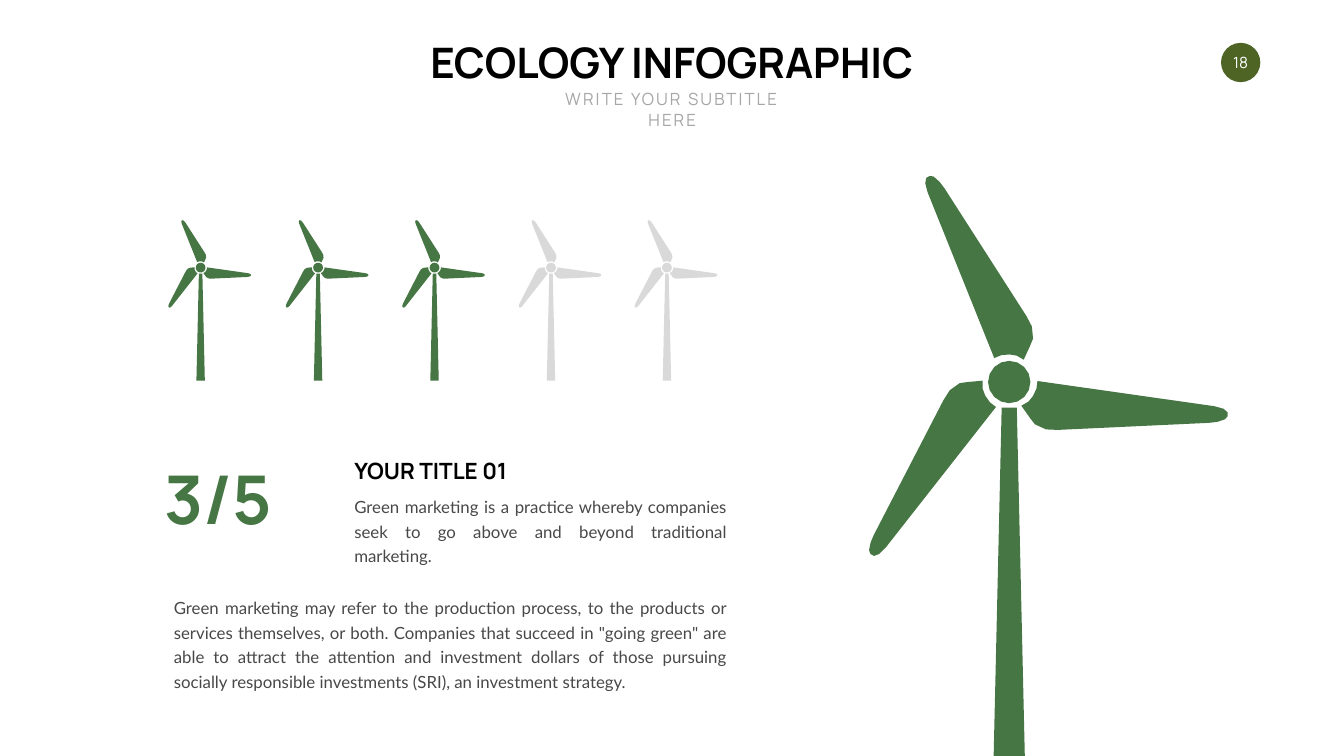
"""Ecology infographic slide: wind turbines showing three out of five."""
from math import cos, pi, radians, sin

from pptx import Presentation
from pptx.dml.color import RGBColor
from pptx.enum.shapes import MSO_SHAPE as Shape
from pptx.enum.text import MSO_ANCHOR as Anchor, MSO_AUTO_SIZE as AutoSize, PP_ALIGN as Align
from pptx.util import Inches, Pt

COLORS = {
    "green": "467643", "olive": "4D6425", "idle": "D9D9D9", "black": "000000",
    "white": "FFFFFF", "subtitle": "A6A6A6", "body": "484848",
}
BLADE = [
    (0.56, -0.02), (4.07, 0.48), (4.25, 0.53), (4.33, 0.6), (4.33, 0.68),
    (4.28, 0.74), (4.13, 0.79), (3.96, 0.81), (0.96, 0.95), (0.73, 0.94),
    (0.51, 0.84), (0.41, 0.71), (0.24, 0.47), (0.38, 0.39), (0.47, 0.28),
    (0.54, 0.13),
]
HUB_RADIUS = 0.42
HUB_POINTS = 16
TOWER_TOP = 0.51
SMALL_SCALE = 0.23
SMALL_HUBS = [3.98, 6.31, 8.62, 10.93, 13.23]
ACTIVE_COUNT = 3
INTRO = ("Green marketing is a practice whereby companies seek to go above "
         "and beyond traditional marketing.")
DETAIL = ("Green marketing may refer to the production process, to the products or "
          "services themselves, or both. Companies that succeed in \"going green\" are "
          "able to attract the attention and investment dollars of those pursuing "
          "socially responsible investments (SRI), an investment strategy.")


def rgb(name):
    """Return the named colour."""
    return RGBColor.from_string(COLORS[name])


def paint(shape, color):
    """Give a shape a plain fill without line or shadow."""
    shape.shadow.inherit = False
    shape.fill.solid()
    shape.fill.fore_color.rgb = rgb(color)
    shape.line.fill.background()


def rotate(points, degrees):
    """Turn points around the hub."""
    c, s = cos(radians(degrees)), sin(radians(degrees))
    return [(x * c - y * s, x * s + y * c) for x, y in points]


def add_turbine(page, hub_x, hub_y, scale, foot, color):
    """Draw a turbine around its hub, with the tower reaching down to foot."""
    depth = (foot - hub_y) / scale
    half = 0.15 + 0.023 * (depth - TOWER_TOP)
    tower = [(0.15, TOWER_TOP), (half, depth), (-half, depth), (-0.15, TOWER_TOP)]
    angles = [2 * pi * i / HUB_POINTS for i in range(HUB_POINTS)]
    hub = [(HUB_RADIUS * cos(a), HUB_RADIUS * sin(a)) for a in angles]
    blades = [rotate(BLADE, turn) for turn in (0, 120, 240)]

    builder = None
    for outline in [tower, hub, *blades]:
        points = [(Inches(hub_x + x * scale), Inches(hub_y + y * scale))
                  for x, y in outline]
        if builder is None:
            builder = page.shapes.build_freeform(*points[0])
        else:
            builder.move_to(*points[0])
        builder.add_line_segments(points[1:], close=True)
    paint(builder.convert_to_shape(), color)


def style_text(frame, text, size, color, font="Manrope", bold=False, align=Align.LEFT):
    """Fill a text frame with one formatted paragraph and return it."""
    frame.text = text
    paragraph = frame.paragraphs[0]
    paragraph.alignment = align
    span = paragraph.runs[0]
    span.font.name = font
    span.font.size = Pt(size)
    span.font.bold = bold
    span.font.color.rgb = rgb(color)
    return paragraph


def add_text(page, place, text, size, color, wrap=False, **style):
    """Add a text box and return its paragraph."""
    box = page.shapes.add_textbox(*map(Inches, place))
    box.text_frame.word_wrap = wrap
    box.text_frame.auto_size = AutoSize.SHAPE_TO_FIT_TEXT
    return style_text(box.text_frame, text, size, color, **style)


def add_body(page, place, text):
    """Add a justified body paragraph."""
    paragraph = add_text(page, place, text, 24, "body", wrap=True,
                         font="Lato", align=Align.JUSTIFY)
    paragraph.line_spacing = Pt(35)


def add_page_number(page, number):
    """Add the round page number badge."""
    badge = page.shapes.add_shape(Shape.OVAL, *map(Inches, (24.22, 0.85, 0.78, 0.78)))
    paint(badge, "olive")
    frame = badge.text_frame
    frame.margin_left = frame.margin_right = Inches(0.05)
    frame.margin_top = frame.margin_bottom = Inches(0.05)
    frame.vertical_anchor = Anchor.MIDDLE
    style_text(frame, number, 22, "white", align=Align.CENTER)


def main():
    """Build and save the slide."""
    deck = Presentation()
    deck.slide_width, deck.slide_height = Inches(26.66), Inches(15)
    page = deck.slides.add_slide(deck.slide_layouts[6])

    add_page_number(page, "18")
    add_turbine(page, 20.02, 7.58, 1, 15, "green")
    add_text(page, (8.2, 0.67, 10.25, 1.11), "ECOLOGY INFOGRAPHIC", 60, "black",
             bold=True, align=Align.CENTER)
    subtitle = add_text(page, (10.62, 1.72, 5.43, 0.5), "WRITE YOUR SUBTITLE HERE", 24,
                        "subtitle", wrap=True, align=Align.CENTER)
    subtitle.runs[0].font._element.set("spc", "300")

    for index, hub_x in enumerate(SMALL_HUBS):
        color = "green" if index < ACTIVE_COUNT else "idle"
        add_turbine(page, hub_x, 5.31, SMALL_SCALE, 7.55, color)

    add_text(page, (3.16, 9.03, 2.5, 1.72), "3/5", 96, "green", bold=True)
    add_text(page, (6.93, 9.03, 3.23, 0.64), "YOUR TITLE 01", 32, "black", bold=True)
    add_body(page, (6.93, 9.72, 7.58, 1.03), INTRO)
    add_body(page, (3.35, 11.73, 11.16, 2.01), DETAIL)
    deck.save("out.pptx")


if __name__ == "__main__":
    main()
